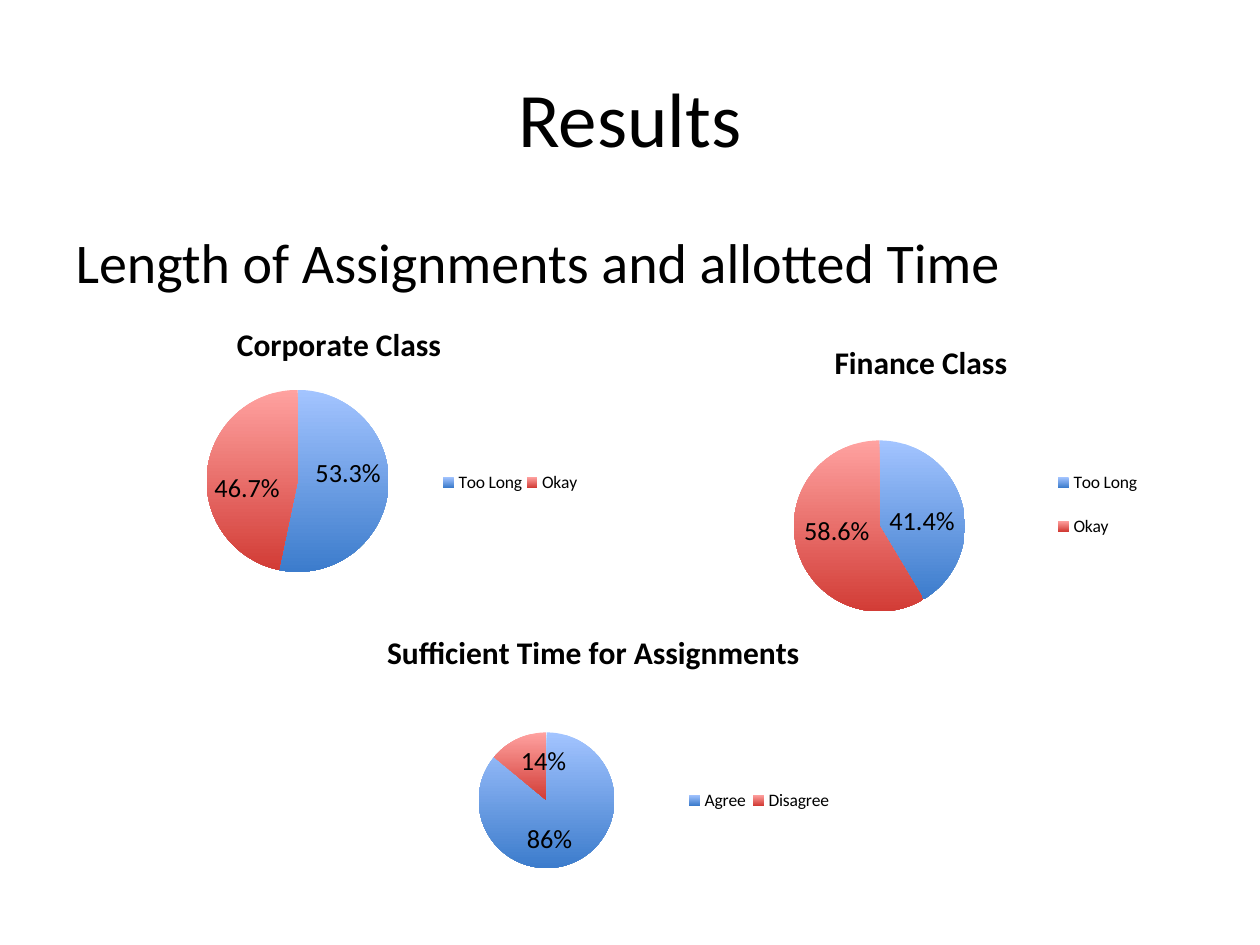
from lxml import etree
from pptx import Presentation
from pptx.chart.data import CategoryChartData
from pptx.dml.color import RGBColor
from pptx.enum.chart import XL_CHART_TYPE, XL_LABEL_POSITION, XL_LEGEND_POSITION
from pptx.enum.text import MSO_ANCHOR, PP_ALIGN
from pptx.oxml.ns import qn
from pptx.util import Cm, Pt

PIE = XL_CHART_TYPE.PIE
INSIDE_END = XL_LABEL_POSITION.INSIDE_END
LEGEND_RIGHT = XL_LEGEND_POSITION.RIGHT
MIDDLE = MSO_ANCHOR.MIDDLE
CENTER, LEFT = PP_ALIGN.CENTER, PP_ALIGN.LEFT

THEME = {
    "font": "Calibri",
    "text": RGBColor(0x00, 0x00, 0x00),
    "slices": [("A3C4FF", "3C7CCC"), ("FFA2A0", "D23C36")],
    "title": Pt(44),
    "body": Pt(32),
    "chart_title": Pt(18),
    "label": Pt(15),
    "legend": Pt(10),
}


def style(font, size, bold=False):
    font.name = THEME["font"]
    font.size = THEME[size]
    font.bold = bold
    font.color.rgb = THEME["text"]


def place(parent, index, box, inner=False):
    for old in parent.findall(qn("c:layout")):
        parent.remove(old)
    layout = etree.Element(qn("c:layout"))
    manual = etree.SubElement(layout, qn("c:manualLayout"))
    settings = [("layoutTarget", "inner")] if inner else []
    settings += [("xMode", "edge"), ("yMode", "edge")]
    settings += zip("xywh", box)
    for tag, val in settings:
        etree.SubElement(manual, qn(f"c:{tag}")).set("val", str(val))
    parent.insert(index, layout)


prs = Presentation()
prs.slide_width, prs.slide_height = Cm(25.4), Cm(19.05)
slide = prs.slides.add_slide(prs.slide_layouts[1])
title, body = slide.placeholders

for sp, text, size, align, top, height in [
    (title, "Results", "title", CENTER, 0.76, 3.18),
    (body, "Length of Assignments and allotted Time", "body", LEFT, 4.45, 12.57),
]:
    sp.left, sp.top, sp.width, sp.height = Cm(1.27), Cm(top), Cm(22.86), Cm(height)
    p = sp.text_frame.paragraphs[0]
    p.alignment = align
    r = p.add_run()
    r.text = text
    style(r.font, size)

title.text_frame.vertical_anchor = MIDDLE
p = body.text_frame.paragraphs[0]
p.space_before = Pt(6.4)
pPr = p._p.get_or_add_pPr()
pPr.set("marL", "0")
pPr.set("indent", "0")
etree.SubElement(pPr, qn("a:buNone"))

LENGTH = ["Too Long", "Okay"]
AGREEMENT = ["Agree", "Disagree"]
charts = [
    ("Finance Class", LENGTH, (0.414, 0.586), "0.0%", (13, 6.5),
     (0.27, 0.38, 0.31, 0.56), (0.71, 0.41, 0.22, 0.36)),
    ("Corporate Class", LENGTH, (0.533, 0.467), "0.0%", (1.27, 6.12),
     (0.26, 0.28, 0.33, 0.59), (0.68, 0.53, 0.26, 0.1)),
    ("Sufficient Time for Assignments", AGREEMENT, (0.86, 0.14), "0%", (6.4, 12.34),
     (0.29, 0.39, 0.25, 0.44), (0.66, 0.56, 0.28, 0.1)),
]

for name, cats, vals, fmt, (left, top), pie_box, legend_box in charts:
    data = CategoryChartData(number_format=fmt)
    data.categories = cats
    data.add_series(name, vals)
    frame = slide.shapes.add_chart(PIE, Cm(left), Cm(top), Cm(11.13), Cm(6.22), data)
    chart = frame.chart
    style(chart.font, "legend")

    chart.has_title = True
    r = chart.chart_title.text_frame.paragraphs[0].add_run()
    r.text = name
    style(r.font, "chart_title", True)
    chart.chart_title.include_in_layout = False

    chart.has_legend = True
    legend = chart.legend
    legend.position = LEGEND_RIGHT
    legend.include_in_layout = False
    style(legend.font, "legend")
    place(legend._element, 1, legend_box)

    plot = chart.plots[0]
    plot.vary_by_categories = True
    place(chart._chartSpace.chart.plotArea, 0, pie_box, True)
    series = plot.series[0]
    for i, colors in enumerate(THEME["slices"]):
        fmt_point = series.points[i].format
        fmt_point.line.fill.background()
        fmt_point.fill.gradient()
        fmt_point.fill.gradient_angle = 270
        for stop, color in zip(fmt_point.fill.gradient_stops, colors):
            stop.color.rgb = RGBColor.from_string(color)

    labels = series.data_labels
    labels.show_value = True
    labels.show_percentage = False
    labels.number_format = fmt
    labels.number_format_is_linked = False
    labels.position = INSIDE_END
    style(labels.font, "label")

prs.save("out.pptx")
